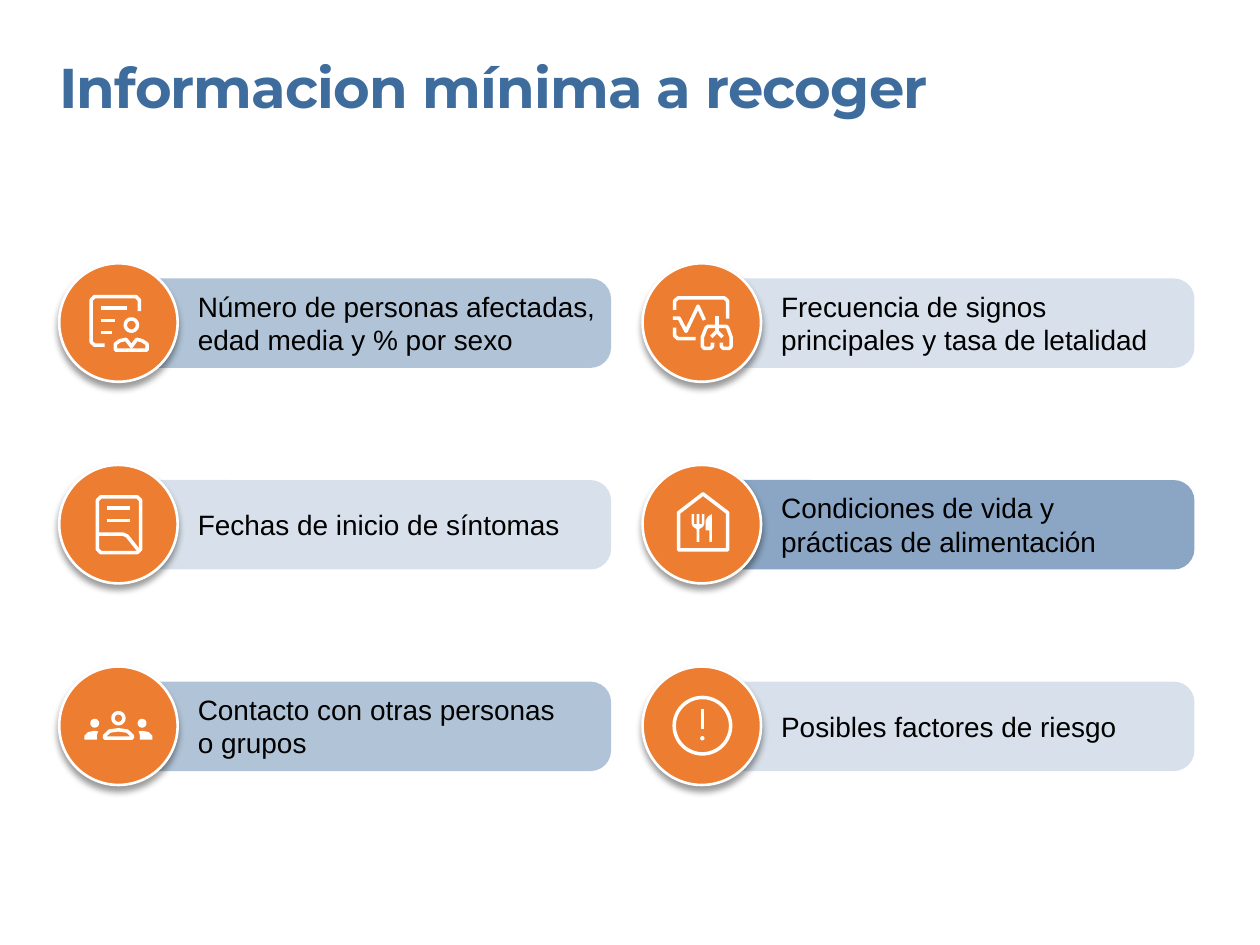
from dataclasses import dataclass
from math import cos, pi, sin

from lxml import etree
from pptx import Presentation
from pptx import util as u
from pptx.dml.color import RGBColor
from pptx.enum import shapes, text
from pptx.oxml import ns

COLUMNS, ROWS = 1000, 750
CELL = u.Inches(0.01)


@dataclass(frozen=True)
class Theme:
    blue: str = "3D6C9D"
    orange: str = "ED7D31"
    white: str = "FFFFFF"
    black: str = "000000"
    title_font: str = "Montserrat"
    body_font: str = "Arial"
    title_size: float = 32
    body_size: float = 16
    title_spacing: float = -0.5
    rim: float = 1.5
    stroke: float = 2


def ring(x, y, radius, steps=48):
    return [(x + radius * cos(2 * pi * i / steps), y + radius * sin(2 * pi * i / steps))
            for i in range(steps + 1)]


def mirrored(points):
    return [(94 - x, y) for x, y in points]


def rule(left, right, y):
    return [(left, y), (right, y)]


def cells(*lengths):
    return [round(length * CELL) for length in lengths]


SIDE_BODY = [(20, 58), (20, 55), (23, 52), (28, 51), (31, 51.5), (30, 54), (30, 58)]
SIDE_HEAD = ring(28.2, 45, 3.5)

PATIENT = {"lines": [
    [(36, 65), (28, 65), (25.4, 62.5), (25.4, 29), (28, 26.4), (61, 26.4), (63.6, 29), (63.6, 38)],
    rule(33, 54, 35.5), rule(33, 44.5, 45.5), rule(33, 42, 55),
    ring(57.3, 49, 4.8),
    [(44.5, 68.8), (44.5, 64), (48, 61.5), (53, 60.3), (57.3, 66), (61.5, 60.3),
     (66, 61.5), (69.7, 64), (69.7, 68.8), (44.5, 68.8)]]}
VITALS = {"lines": [
    [(25.4, 37), (25.4, 30), (28, 27.5), (65, 27.5), (67.5, 30), (67.5, 44)],
    [(25.4, 51), (25.4, 57.5), (28, 59.8), (42, 59.8)],
    [(24, 43.5), (29, 43.5), (34.5, 54), (44, 34), (49, 45)],
    [(59, 42), (59, 54)], [(54.5, 58.5), (59, 54), (63.5, 58.5)],
    [(55.5, 63), (55.5, 66), (54, 67.5), (49, 67.5), (47.5, 66), (47.5, 58.5), (50.5, 51),
     (52, 50), (66, 50), (67.5, 51), (70.2, 58.5), (70.2, 66), (69, 67.5), (64, 67.5),
     (62.5, 66), (62.5, 63)]]}
RECORD = {"lines": [
    [(33, 25.3), (62, 25.3), (64.6, 28), (64.6, 67), (62, 69.6), (33, 69.6),
     (30.3, 67), (30.3, 28), (33, 25.3)],
    rule(38, 56, 34.2), rule(38, 56, 44.2),
    [(30.3, 55), (51, 55), (54, 56.5), (64, 69)]]}
HOME = {"lines": [
    [(28.5, 67.5), (28.5, 38), (48, 23), (67.5, 38), (67.5, 67.5), (28.5, 67.5)]],
    "solids": [
    [(43, 61), (43, 51), (40, 49), (39, 47), (39, 39), (41, 39), (41, 47), (43, 47), (43, 39),
     (45, 39), (45, 47), (47, 47), (47, 39), (49, 39), (49, 47), (48, 49), (45, 51), (45, 61)],
    [(53, 61), (53, 52), (50, 52), (50, 44), (52, 41), (55, 39), (55, 61)]]}
GROUP = {"lines": [
    ring(47, 41, 4.3),
    [(36, 56.8), (36, 55), (40, 51.2), (47, 50.2), (54, 51.2), (58, 55), (58, 56.8), (36, 56.8)]],
    "solids": [SIDE_HEAD, SIDE_BODY, mirrored(SIDE_HEAD), mirrored(SIDE_BODY)]}
ALERT = {"lines": [ring(47.5, 47, 22.4), [(47.5, 34), (47.5, 50)]],
         "solids": [ring(47.5, 57, 1.7)]}

CARDS = [
    ("Número de personas afectadas, edad media y % por sexo", 40, 325, 2, PATIENT),
    ("Frecuencia de signos principales y tasa de letalidad", 20, 310, 2, VITALS),
    ("Fechas de inicio de síntomas", 20, 301, 1, RECORD),
    ("Condiciones de vida y prácticas de alimentación", 60, 310, 2, HOME),
    ("Contacto con otras personas o grupos", 40, 292, 2, GROUP),
    ("Posibles factores de riesgo", 20, 310, 1, ALERT),
]


class Deck:
    def __init__(self, theme):
        self.theme = theme
        self.deck = Presentation()
        self.deck.slide_width, self.deck.slide_height = cells(COLUMNS, ROWS)
        self.slide = self.deck.slides.add_slide(self.deck.slide_layouts[5])

    def paint(self, shape, fill=None, line=None, weight=0):
        shape.shadow.inherit = False
        if fill:
            shape.fill.solid()
            shape.fill.fore_color.rgb = RGBColor.from_string(fill)
        else:
            shape.fill.background()
        if line:
            shape.line.color.rgb = RGBColor.from_string(line)
            shape.line.width = u.Pt(weight)
        else:
            shape.line.fill.background()

    def preset(self, kind, *place):
        return self.slide.shapes.add_shape(kind, *cells(*place))

    def add_words(self, frame, words, font, size, color, bold=False):
        frame.margin_left = frame.margin_top = frame.margin_right = frame.margin_bottom = 0
        frame.word_wrap = True
        frame.vertical_anchor = text.MSO_ANCHOR.TOP
        frame.auto_size = text.MSO_AUTO_SIZE.SHAPE_TO_FIT_TEXT
        paragraph = frame.paragraphs[0]
        paragraph.alignment = text.PP_ALIGN.LEFT
        run = paragraph.add_run()
        run.text = words
        run.font.name, run.font.size, run.font.bold = font, u.Pt(size), bold
        run.font.color.rgb = RGBColor.from_string(color)
        return run

    def title(self, words, *place):
        heading = self.slide.shapes.title
        heading.left, heading.top, heading.width, heading.height = cells(*place)
        run = self.add_words(heading.text_frame, words, self.theme.title_font,
                             self.theme.title_size, self.theme.blue, True)
        run.font._element.set("spc", str(int(self.theme.title_spacing * 100)))

    def label(self, words, *place):
        box = self.slide.shapes.add_textbox(*cells(*place))
        self.add_words(box.text_frame, words, self.theme.body_font,
                       self.theme.body_size, self.theme.black)

    def bar(self, left, top, width, height, opacity):
        bar = self.preset(shapes.MSO_SHAPE.ROUNDED_RECTANGLE, left, top, width, height)
        bar.adjustments[0] = 0.23
        self.paint(bar, self.theme.blue)
        color = bar._element.spPr.find(".//" + ns.qn("a:srgbClr"))
        etree.SubElement(color, ns.qn("a:alpha"), val=str(opacity * 1000))

    def badge(self, left, top, size):
        badge = self.preset(shapes.MSO_SHAPE.OVAL, left, top, size, size)
        self.paint(badge, self.theme.orange, self.theme.white, self.theme.rim)
        effects = badge._element.spPr.find(ns.qn("a:effectLst"))
        shadow = etree.SubElement(effects, ns.qn("a:outerShdw"), blurRad=str(int(u.Pt(4))),
                                  dist=str(int(u.Pt(3))), dir="5400000", rotWithShape="0")
        color = etree.SubElement(shadow, ns.qn("a:srgbClr"), val=self.theme.black)
        etree.SubElement(color, ns.qn("a:alpha"), val="40000")

    def outline(self, left, top, contours, closed):
        first, *others = [[cells(left + x, top + y) for x, y in contour]
                          for contour in contours]
        builder = self.slide.shapes.build_freeform(*first[0])
        builder.add_line_segments(first[1:], close=closed)
        for contour in others:
            builder.move_to(*contour[0])
            builder.add_line_segments(contour[1:], close=closed)
        return builder.convert_to_shape()

    def icon(self, left, top, lines, solids=()):
        self.paint(self.outline(left, top, lines, False),
                   line=self.theme.white, weight=self.theme.stroke)
        if solids:
            self.paint(self.outline(left, top, solids, True), fill=self.theme.white)

    def card(self, column, row, words, opacity, width, line_count, icon):
        left, top = 47 + 463 * column, 209 + 160 * row
        height = 27 * line_count
        self.bar(left + 47, top + 12, 391, 71, opacity)
        self.badge(left, top, 94)
        self.label(words, left + 110, top + 47.5 - height / 2, width, height)
        self.icon(left, top, **icon)


def main():
    builder = Deck(Theme())
    builder.title("Informacion mínima a recoger", 47, 42, 867, 54)
    for index, card in enumerate(CARDS):
        row, column = divmod(index, 2)
        builder.card(column, row, *card)
    builder.deck.save("out.pptx")


if __name__ == "__main__":
    main()
